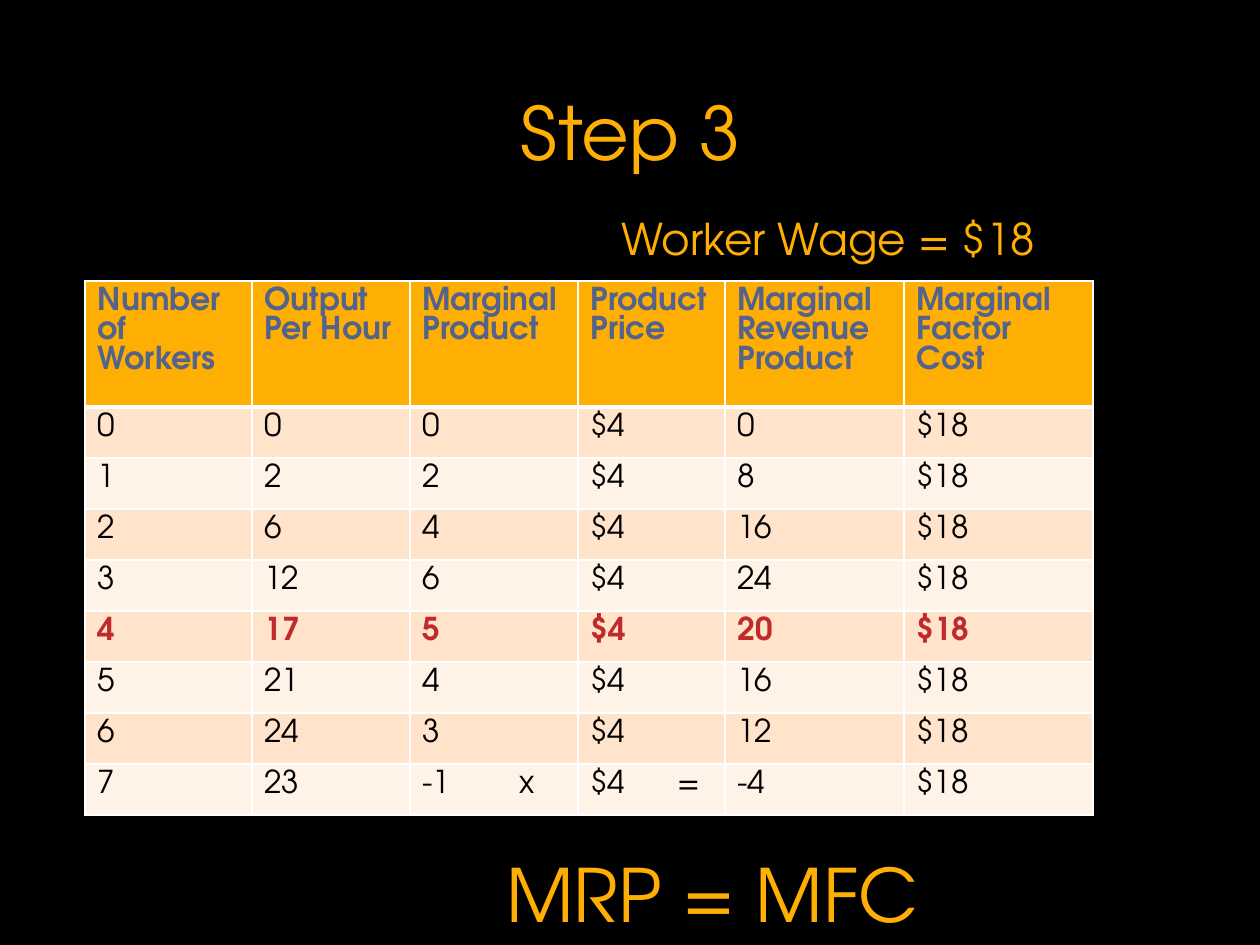
import pptx
import pptx.util
import pptx.oxml
import pptx.oxml.ns
from pptx.dml.color import RGBColor
from pptx.enum.text import MSO_ANCHOR, PP_ALIGN

PX = 914400 // 126
FONT = "TeX Gyre Adventor"
BLACK = RGBColor(0x00, 0x00, 0x00)
AMBER = RGBColor(0xFF, 0xAF, 0x03)
SLATE = RGBColor(0x54, 0x63, 0x8C)
RED = RGBColor(0xBF, 0x2B, 0x2B)
WHITE = RGBColor(0xFF, 0xFF, 0xFF)
PEACH = RGBColor(0xFF, 0xE3, 0xCB)
CREAM = RGBColor(0xFF, 0xF2, 0xE7)

COLUMN_WIDTHS = [167, 158, 168, 147, 179, 189]
HEADER_HEIGHT, ROW_HEIGHT = 126, 51
HEADERS = ["Number of Workers", "Output Per Hour", "Marginal Product",
           "Product\nPrice", "Marginal Revenue Product", "Marginal Factor Cost"]
OUTPUTS = [0, 2, 6, 12, 17, 21, 24, 23]
PRICE, WAGE = 4, 18
BEST_WORKERS = 4
OPERATOR_TABS = {2: ("x", 97), 3: ("=", 87)}


def px(length):
    return pptx.util.Emu(length * PX)


def add_span(para, text, size, color, bold=False):
    span = para.add_run()
    span.text = text
    span.font.name = FONT
    span.font.size = pptx.util.Pt(size)
    span.font.color.rgb = color
    span.font.bold = bold


def add_label(page, box, text, size, align=PP_ALIGN.LEFT):
    frame = page.shapes.add_textbox(*map(px, box)).text_frame
    frame.word_wrap = True
    frame.vertical_anchor = MSO_ANCHOR.TOP
    para = frame.paragraphs[0]
    para.alignment = align
    add_span(para, text, size, AMBER)


def set_borders(cell, top=1, bottom=1):
    """Draw white borders, with widths in points."""
    properties = cell._tc.get_or_add_tcPr()
    widths = {"lnL": 1, "lnR": 1, "lnT": top, "lnB": bottom}
    for index, (tag, width) in enumerate(widths.items()):
        line = pptx.oxml.parse_xml(
            f'<a:{tag} {pptx.oxml.ns.nsdecls("a")} w="{width * 12700}">'
            f'<a:solidFill><a:srgbClr val="{WHITE}"/></a:solidFill></a:{tag}>')
        properties.insert(index, line)


def set_tab(para, position):
    tabs = pptx.oxml.parse_xml(
        f'<a:tabLst {pptx.oxml.ns.nsdecls("a")}>'
        f'<a:tab pos="{px(position)}" algn="l"/></a:tabLst>')
    para._p.get_or_add_pPr().append(tabs)


def fill_cell(cell, text, fill, color, bold):
    cell.fill.solid()
    cell.fill.fore_color.rgb = fill
    frame = cell.text_frame
    for index, line in enumerate(text.split("\n")):
        para = frame.add_paragraph() if index else frame.paragraphs[0]
        add_span(para, line, 18, color, bold)


def worker_rows():
    """Work out each row of the table from the outputs, price and wage."""
    rows = []
    for workers, output in enumerate(OUTPUTS):
        marginal = output - OUTPUTS[max(workers - 1, 0)]
        rows.append([str(workers), str(output), str(marginal), f"${PRICE}",
                     str(marginal * PRICE), f"${WAGE}"])
    return rows


def add_worker_table(page, left, top):
    rows = worker_rows()
    height = HEADER_HEIGHT + ROW_HEIGHT * len(rows)
    table = page.shapes.add_table(
        len(rows) + 1, len(HEADERS), px(left), px(top),
        px(sum(COLUMN_WIDTHS)), px(height)).table
    for column, width in zip(table.columns, COLUMN_WIDTHS):
        column.width = px(width)
    for index, row in enumerate(table.rows):
        row.height = px(ROW_HEIGHT if index else HEADER_HEIGHT)

    for index, header in enumerate(HEADERS):
        cell = table.cell(0, index)
        fill_cell(cell, header, AMBER, SLATE, True)
        set_borders(cell, bottom=3)

    for workers, values in enumerate(rows):
        best = workers == BEST_WORKERS
        last = workers == len(rows) - 1
        for index, value in enumerate(values):
            cell = table.cell(workers + 1, index)
            has_operator = last and index in OPERATOR_TABS
            if has_operator:
                operator, position = OPERATOR_TABS[index]
                value = f"{value}\t{operator}"
            fill_cell(cell, value, CREAM if workers % 2 else PEACH,
                      RED if best else BLACK, best)
            if has_operator:
                set_tab(cell.text_frame.paragraphs[0], position)
            set_borders(cell, top=1 if workers else 3)


def main():
    deck = pptx.Presentation()
    deck.slide_width, deck.slide_height = px(1260), px(945)
    page = deck.slides.add_slide(deck.slide_layouts[6])
    page.background.fill.solid()
    page.background.fill.fore_color.rgb = BLACK
    add_label(page, (85, 81, 1091, 108), "Step 3", 42, PP_ALIGN.CENTER)
    add_worker_table(page, 85, 281)
    add_label(page, (609, 206, 483, 68), f"Worker Wage = ${WAGE}", 25)
    add_label(page, (494, 843, 462, 102), "MRP = MFC", 42)
    deck.save("out.pptx")


if __name__ == "__main__":
    main()
